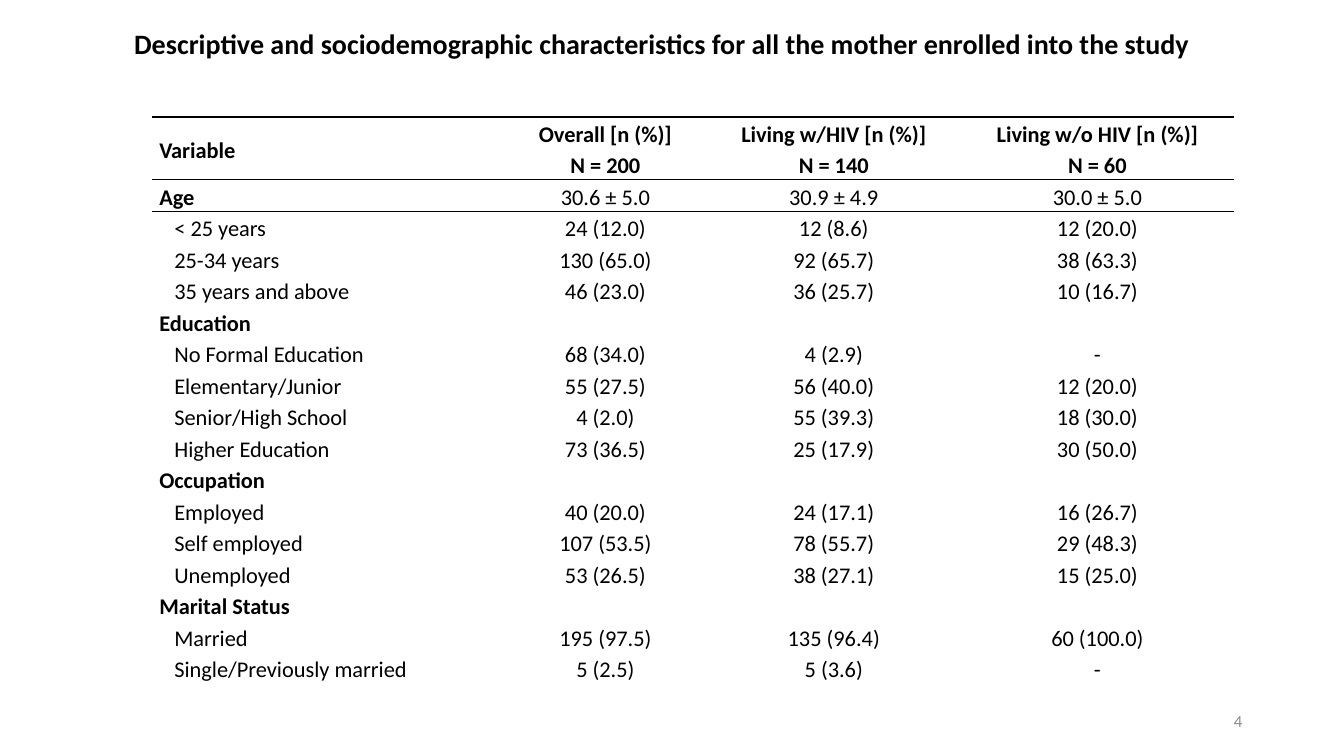
from lxml import etree
from pptx import Presentation, util as u
from pptx.dml import color
from pptx.enum import text
from pptx.oxml import ns


def paint(target, hex_code):
    target.rgb = color.RGBColor.from_string(hex_code)


def style(paragraph, hex_code, formats):
    for run in paragraph.runs:
        for key, value in formats.items():
            setattr(run.font, key, value)
        paint(run.font.color, hex_code)


BLACK, GREY = "000000", "898989"
FONT = "Calibri"
NO_GRID_STYLE = "{2D5ABB26-0587-4C30-8999-92F81FD0307C}"
COLUMN_WIDTHS = [3.49, 2.01, 2.52, 2.71]
ROW_HEIGHT, SIDE_MARGIN, INDENT = 0.31, 0.07, 0.15

heading = ["Variable", "Overall [n (%)]\nN = 200", "Living w/HIV [n (%)]\nN = 140",
           "Living w/o HIV [n (%)]\nN = 60"]
groups = {
    ("Age", "30.6 ± 5.0", "30.9 ± 4.9", "30.0 ± 5.0"): [
        ("< 25 years", "24 (12.0)", "12 (8.6)", "12 (20.0)"),
        ("25-34 years", "130 (65.0)", "92 (65.7)", "38 (63.3)"),
        ("35 years and above", "46 (23.0)", "36 (25.7)", "10 (16.7)"),
    ],
    ("Education", "", "", ""): [
        ("No Formal Education", "68 (34.0)", "4 (2.9)", "-"),
        ("Elementary/Junior", "55 (27.5)", "56 (40.0)", "12 (20.0)"),
        ("Senior/High School", "4 (2.0)", "55 (39.3)", "18 (30.0)"),
        ("Higher Education", "73 (36.5)", "25 (17.9)", "30 (50.0)"),
    ],
    ("Occupation", "", "", ""): [
        ("Employed", "40 (20.0)", "24 (17.1)", "16 (26.7)"),
        ("Self employed", "107 (53.5)", "78 (55.7)", "29 (48.3)"),
        ("Unemployed", "53 (26.5)", "38 (27.1)", "15 (25.0)"),
    ],
    ("Marital Status", "", "", ""): [
        ("Married", "195 (97.5)", "135 (96.4)", "60 (100.0)"),
        ("Single/Previously married", "5 (2.5)", "5 (3.6)", "-"),
    ],
}
rows = [("heading", heading)]
for group, members in groups.items():
    rows.append(("group", group))
    rows.extend(("member", member) for member in members)

deck = Presentation()
deck.slide_width, deck.slide_height = u.Inches(13.33), u.Inches(7.5)
slide = deck.slides.add_slide(deck.slide_layouts.get_by_name("Title Only"))

title = slide.shapes.title
title.left, title.top, title.width, title.height = map(u.Inches, (1.23, 0.3, 11.29, 1.11))
title_frame = title.text_frame
title_frame.text = "Descriptive and sociodemographic characteristics for all the mother enrolled into the study"
for key, value in {"vertical_anchor": text.MSO_ANCHOR.TOP, "margin_top": 0, "word_wrap": True,
                   "auto_size": text.MSO_AUTO_SIZE.NONE}.items():
    setattr(title_frame, key, value)
title_line = title_frame.paragraphs[0]
title_line.alignment, title_line.line_spacing = text.PP_ALIGN.LEFT, 0.9
style(title_line, BLACK, {"name": FONT, "size": u.Pt(20), "bold": True})

characteristics = slide.shapes.add_table(
    len(rows), len(COLUMN_WIDTHS), u.Inches(1.51), u.Inches(1.16),
    u.Inches(sum(COLUMN_WIDTHS)), u.Inches(ROW_HEIGHT * (len(rows) + 1))).table
characteristics.first_row = characteristics.horz_banding = False
characteristics._tbl.tblPr.find(ns.qn("a:tableStyleId")).text = NO_GRID_STYLE
for column, width in zip(characteristics.columns, COLUMN_WIDTHS):
    column.width = u.Inches(width)

for r, (kind, values) in enumerate(rows):
    characteristics.rows[r].height = u.Inches(ROW_HEIGHT * (2 if kind == "heading" else 1))
    rules = {0: ["a:lnT", "a:lnB"], 1: ["a:lnT"]}.get(r, [])
    for c, value in enumerate(values):
        cell = characteristics.cell(r, c)
        indent = INDENT if kind == "member" and c == 0 else 0
        for key, setting in {
            "margin_left": u.Inches(SIDE_MARGIN + indent), "margin_right": u.Inches(SIDE_MARGIN),
            "margin_top": 0, "margin_bottom": 0,
            "vertical_anchor": text.MSO_ANCHOR.MIDDLE if kind == "heading" else text.MSO_ANCHOR.TOP,
        }.items():
            setattr(cell, key, setting)
        for rule in rules:
            border = etree.SubElement(cell._tc.get_or_add_tcPr(), ns.qn(rule), w=str(u.Pt(1)))
            ink = etree.SubElement(border, ns.qn("a:solidFill"))
            etree.SubElement(ink, ns.qn("a:srgbClr"), val=BLACK)
        cell.fill.background()
        if not value:
            continue
        cell.text = value
        bold = kind == "heading" or (kind == "group" and c == 0)
        for paragraph in cell.text_frame.paragraphs:
            paragraph.alignment = text.PP_ALIGN.CENTER if c else text.PP_ALIGN.LEFT
            paragraph.line_spacing = 1.15
            style(paragraph, BLACK, {"name": FONT, "size": u.Pt(16), "bold": bold})

page_number = slide.shapes.add_textbox(*map(u.Inches, (9.42, 6.95, 3, 0.4))).text_frame
page_number.word_wrap = True
page_number.vertical_anchor = text.MSO_ANCHOR.MIDDLE
page_number.text = "4"
page_number.paragraphs[0].alignment = text.PP_ALIGN.RIGHT
style(page_number.paragraphs[0], GREY, {"name": FONT, "size": u.Pt(12)})

deck.save("out.pptx")
